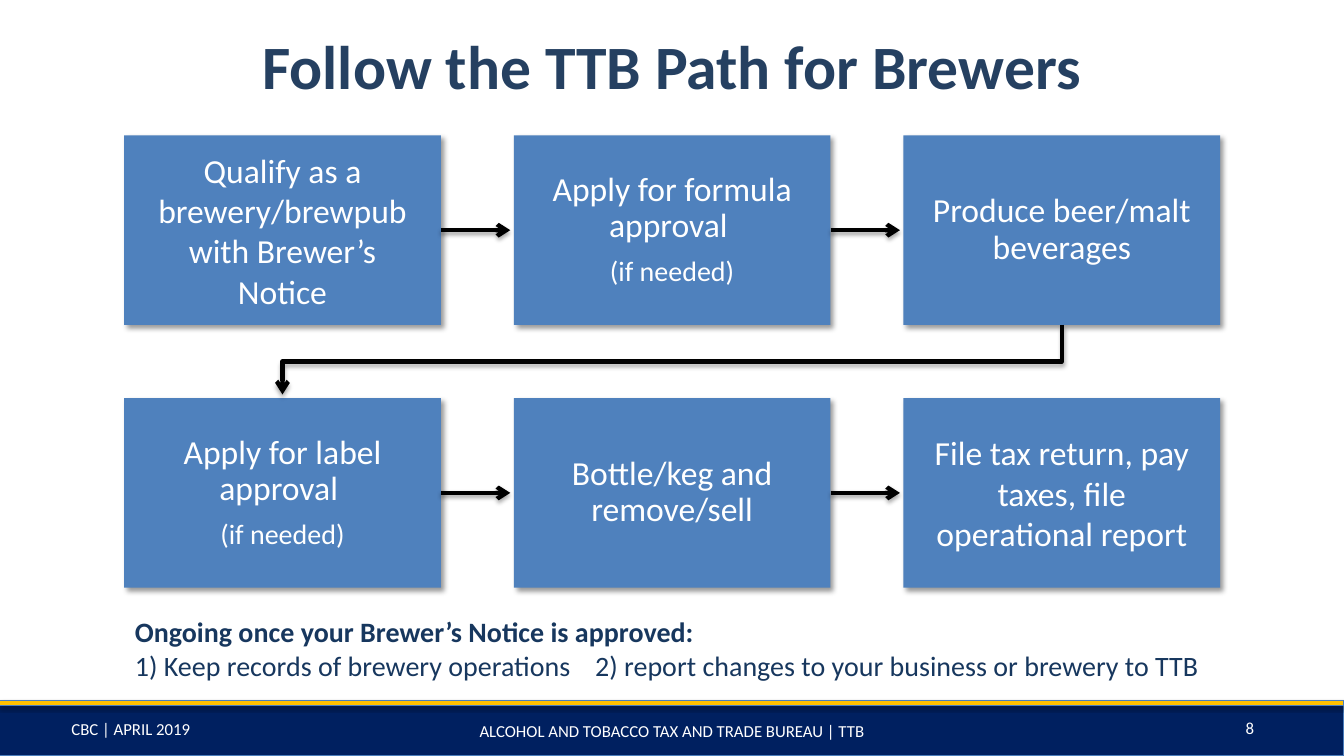
from lxml.etree import SubElement
from pptx import Presentation
from pptx.dml.color import RGBColor
from pptx.enum.shapes import MSO_CONNECTOR, MSO_SHAPE
from pptx.enum.text import MSO_ANCHOR, MSO_AUTO_SIZE, PP_ALIGN
from pptx.oxml.ns import qn
from pptx.util import Cm, Pt

HUES = {
    "navy": "002060", "gold": "FFC000", "edge": "4B7EBC", "box": "4F81BD",
    "title": "254061", "note": "17375E", "white": "FFFFFF", "black": "000000",
}
# Shadow: opacity %, blur pt, distance pt, angle
SOFT = (35, 3.1, 1.8, 90)
DROP = (40, 4, 3, 45)


def hue(name):
    return RGBColor.from_string(HUES[name])


class Deck:
    def __init__(self, wide, high):
        self.prs = Presentation()
        self.prs.slide_width, self.prs.slide_height = Cm(wide), Cm(high)
        self.slide = self.prs.slides.add_slide(self.prs.slide_layouts[5])
        self.shapes = self.slide.shapes
        self.font = "Calibri"

    def shade(self, shape, alpha, blur, dist, angle):
        root = SubElement(shape._element.spPr, qn("a:effectLst"))
        cast = SubElement(root, qn("a:outerShdw"), {
            "blurRad": str(Pt(blur)), "dist": str(Pt(dist)),
            "dir": str(angle * 60000), "algn": "tl", "rotWithShape": "0"})
        tint = SubElement(cast, qn("a:srgbClr"), val=HUES["black"])
        SubElement(tint, qn("a:alpha"), val=str(alpha * 1000))

    def text(self, shape, rows, color, align=PP_ALIGN.CENTER, pad=None,
             anchor=MSO_ANCHOR.MIDDLE, form=None, tab=None):
        """Each row is (words, size, bold)."""
        frame = shape.text_frame
        look = {"word_wrap": True, "auto_size": MSO_AUTO_SIZE.NONE,
                "vertical_anchor": anchor}
        if pad is not None:
            for side in ("left", "right", "top", "bottom"):
                look["margin_" + side] = Cm(pad)
        for key, value in look.items():
            setattr(frame, key, value)
        for i, (words, size, bold) in enumerate(rows):
            para = frame.add_paragraph() if i else frame.paragraphs[0]
            for key, value in {"alignment": align, **(form or {})}.items():
                setattr(para, key, value)
            if tab and "\t" in words:
                tabs = SubElement(para._p.get_or_add_pPr(), qn("a:tabLst"))
                SubElement(tabs, qn("a:tab"), pos=str(Cm(tab)), algn="l")
            run = para.add_run()
            run.text = words
            style = {"name": self.font, "size": Pt(size), "bold": bold}
            for key, value in style.items():
                setattr(run.font, key, value)
            run.font.color.rgb = hue(color)

    def title(self, words, area):
        shape = self.shapes.title
        for key, value in zip(("left", "top", "width", "height"), area):
            setattr(shape, key, Cm(value))
        self.text(shape, [(words, 44, True)], "title")

    def rect(self, area, fill, shadow, edge=None):
        shape = self.shapes.add_shape(MSO_SHAPE.RECTANGLE, *map(Cm, area))
        shape.fill.solid()
        shape.fill.fore_color.rgb = hue(fill)
        if edge:
            shape.line.color.rgb = hue(edge)
            shape.line.width = Pt(0.75)
        else:
            shape.line.fill.background()
        self.shade(shape, *shadow)
        return shape

    def label(self, area, rows, color, **form):
        self.text(self.shapes.add_textbox(*map(Cm, area)), rows, color, **form)

    def stroke(self, shape):
        shape.line.color.rgb = hue("black")
        shape.line.width = Pt(3)
        SubElement(shape.line._get_or_add_ln(), qn("a:tailEnd"), type="arrow")
        self.shade(shape, *SOFT)

    def arrow(self, box, gap):
        x, y = box.left + box.width, box.top + box.height // 2
        link = self.shapes.add_connector(
            MSO_CONNECTOR.STRAIGHT, x, y, x + Cm(gap), y)
        link.begin_connect(box, 3)
        self.stroke(link)

    def bend(self, points):
        spots = [(Cm(x), Cm(y)) for x, y in points]
        outline = self.shapes.build_freeform(*spots[0])
        outline.add_line_segments(spots[1:], close=False)
        shape = outline.convert_to_shape()
        shape.fill.background()
        self.stroke(shape)


LEFT, TOP, WIDE, HIGH = 3.13, 3.41, 7.98, 4.78
STEP_X, STEP_Y = 9.82, 6.62
TIP = 0.09  # space between arrow tip and next box
TIGHT = {"line_spacing": 0.9, "space_after": Pt(9)}
STEPS = [
    [(["Qualify as a brewery/brewpub with Brewer’s Notice"], None),
     (["Apply for formula approval ", "(if needed)"], TIGHT),
     (["Produce beer/malt beverages"], TIGHT)],
    [(["Apply for label approval ", "(if needed)"], TIGHT),
     (["Bottle/keg and remove/sell"], TIGHT),
     (["File tax return, pay taxes, file operational report"], None)],
]


def main():
    deck = Deck(33.87, 19.05)

    # Footer band
    deck.rect((0, 17.65, 33.87, 1.4), "navy", SOFT, "edge")
    deck.rect((0, 17.65, 33.87, 0.13), "gold", SOFT, "edge")
    for words, area in (
        ("CBC | APRIL 2019", (0.05, 17.98, 6.5, 0.77)),
        ("ALCOHOL AND TOBACCO TAX AND TRADE BUREAU | TTB",
         (9.04, 17.91, 15.8, 1.02)),
        ("8", (29.24, 17.84, 4.52, 1.02)),
    ):
        deck.label(area, [(words, 12, False)], "white")

    deck.title("Follow the TTB Path for Brewers", (3.15, 0.58, 27.58, 2.11))

    # Steps with arrows along each row
    for r, line in enumerate(STEPS):
        for c, (parts, form) in enumerate(line):
            area = (LEFT + c * STEP_X, TOP + r * STEP_Y, WIDE, HIGH)
            box = deck.rect(area, "box", DROP)
            rows = [(t, 20 if i else 24, False) for i, t in enumerate(parts)]
            deck.text(box, rows, "white", pad=0.48, form=form)
            if c < len(line) - 1:
                deck.arrow(box, STEP_X - WIDE - TIP)

    # Bent arrow from the first row to the second
    start, end = LEFT + 2 * STEP_X + WIDE / 2, LEFT + WIDE / 2
    base, below = TOP + HIGH, TOP + STEP_Y
    mid = (base + below) / 2
    deck.bend([(start, base), (start, mid), (end, mid), (end, below - TIP)])

    # Ongoing duties
    deck.label((3.15, 15.37, 27.58, 1.96), [
        ("Ongoing once your Brewer’s Notice is approved:", 20, True),
        ("1) Keep records of brewery operations\t"
         "2) report changes to your business or brewery to TTB", 20, False),
    ], "note", align=PP_ALIGN.LEFT, anchor=MSO_ANCHOR.TOP, tab=11.6)

    deck.prs.save("out.pptx")


if __name__ == "__main__":
    main()
